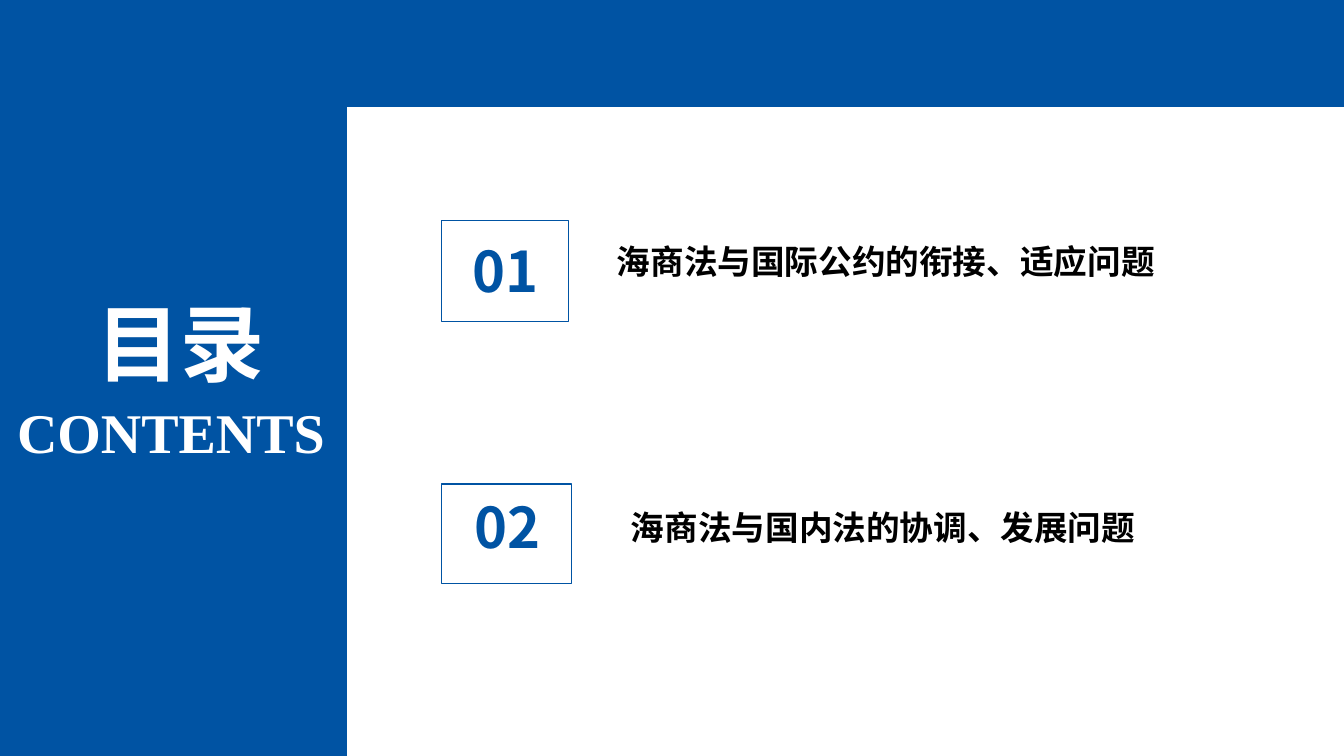
from dataclasses import dataclass

from lxml.etree import SubElement
from pptx import Presentation
from pptx.dml.color import RGBColor
from pptx.enum.shapes import MSO_SHAPE as Preset
from pptx.enum.text import MSO_AUTO_SIZE as AutoSize, PP_ALIGN as Align
from pptx.oxml.ns import qn
from pptx.slide import Slide
from pptx.util import Inches, Pt


@dataclass(frozen=True)
class Theme:
    blue: RGBColor = RGBColor(0x00, 0x53, 0xA3)
    white: RGBColor = RGBColor(0xFF, 0xFF, 0xFF)
    black: RGBColor = RGBColor(0x00, 0x00, 0x00)
    chinese: str = "Noto Sans CJK SC"
    latin: str = "Times New Roman"
    title_size: int = 60
    large_size: int = 40
    topic_size: int = 24
    border: int = 1


@dataclass(frozen=True)
class Box:
    left: float
    top: float
    width: float
    height: float

    def lengths(self) -> tuple[int, int, int, int]:
        return (Inches(self.left), Inches(self.top),
                Inches(self.width), Inches(self.height))


@dataclass(frozen=True)
class Label:
    text: str
    box: Box
    size: int
    color: RGBColor
    font: str
    align: Align


@dataclass(frozen=True)
class Entry:
    number: str
    topic: str
    topic_box: Box
    number_box: Box
    frame: Box


THEME = Theme()
WIDTH, HEIGHT = 13.33, 7.5

SIDE_PANEL = Box(0, 0, 3.44, HEIGHT)
TOP_BAND = Box(0, 0, WIDTH, 1.06)

HEADINGS = [
    Label("目录", Box(0.74, 2.84, 1.98, 1.11), THEME.title_size,
          THEME.white, THEME.chinese, Align.RIGHT),
    Label("CONTENTS", Box(0, 3.89, 3.32, 0.77), THEME.large_size,
          THEME.white, THEME.latin, Align.RIGHT),
]

ENTRIES = [
    Entry("01", "海商法与国际公约的衔接、适应问题", Box(6.02, 2.34, 6.27, 0.5),
          Box(4.38, 2.3, 1.26, 0.77), Box(4.38, 2.19, 1.26, 1)),
    Entry("02", "海商法与国内法的协调、发展问题", Box(6.16, 4.98, 6.31, 0.5),
          Box(4.25, 4.84, 1.57, 0.77), Box(4.38, 4.8, 1.29, 0.99)),
]


def add_panel(slide: Slide, box: Box) -> None:
    panel = slide.shapes.add_shape(Preset.RECTANGLE, *box.lengths())
    panel.shadow.inherit = False
    panel.fill.solid()
    panel.fill.fore_color.rgb = THEME.blue
    panel.line.fill.background()


def add_frame(slide: Slide, box: Box) -> None:
    frame = slide.shapes.add_shape(Preset.RECTANGLE, *box.lengths())
    frame.shadow.inherit = False
    frame.fill.background()
    frame.line.color.rgb = THEME.blue
    frame.line.width = Pt(THEME.border)


def add_label(slide: Slide, label: Label) -> None:
    body = slide.shapes.add_textbox(*label.box.lengths()).text_frame
    body.word_wrap = True
    body.auto_size = AutoSize.SHAPE_TO_FIT_TEXT
    paragraph = body.paragraphs[0]
    paragraph.alignment = label.align
    run = paragraph.add_run()
    run.text = label.text
    run.font.size = Pt(label.size)
    run.font.bold = True
    run.font.color.rgb = label.color
    run.font.name = label.font
    SubElement(run._r.get_or_add_rPr(), qn("a:ea"), typeface=label.font)


def add_entry(slide: Slide, entry: Entry) -> None:
    add_label(slide, Label(entry.topic, entry.topic_box, THEME.topic_size,
                           THEME.black, THEME.chinese, Align.LEFT))
    add_label(slide, Label(entry.number, entry.number_box, THEME.large_size,
                           THEME.blue, THEME.chinese, Align.CENTER))
    add_frame(slide, entry.frame)


def main() -> None:
    deck = Presentation()
    deck.slide_width, deck.slide_height = Inches(WIDTH), Inches(HEIGHT)
    contents = deck.slides.add_slide(deck.slide_layouts[6])
    add_panel(contents, SIDE_PANEL)
    for heading in HEADINGS:
        add_label(contents, heading)
    for entry in ENTRIES:
        add_entry(contents, entry)
    add_panel(contents, TOP_BAND)
    deck.save("out.pptx")


if __name__ == "__main__":
    main()
